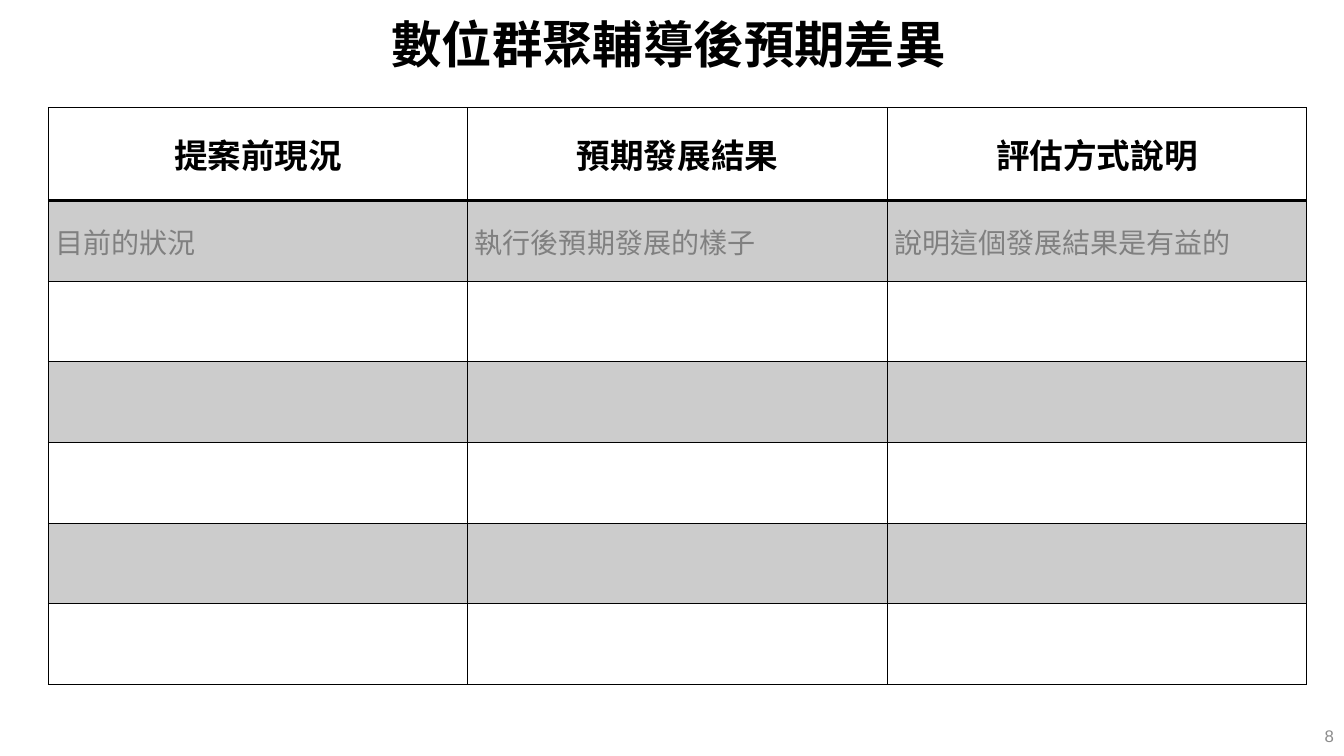
from lxml.etree import SubElement
from pptx import Presentation
from pptx.dml.color import RGBColor
from pptx.enum.lang import MSO_LANGUAGE_ID as Language
from pptx.enum.text import MSO_ANCHOR as Anchor, PP_ALIGN as Align
from pptx.oxml.ns import qn
from pptx.util import Inches, Pt

COLORS = {"ink": "000000", "hint": "808080", "number": "8C8C8C"}
LATIN, CJK = "Arial", "Noto Sans CJK SC"
WIDTH, HEIGHT = 13.33, 7.5
COLUMN_WIDTH, HEADER_HEIGHT, ROW_HEIGHT = 4.16, 0.92, 0.8
ROW_COUNT = 7
HEADERS = ["提案前現況", "預期發展結果", "評估方式說明"]
HINTS = ["目前的狀況", "執行後預期發展的樣子", "說明這個發展結果是有益的"]


def write(text_frame, text, size, color, align, font=CJK, bold=False):
    paragraph = text_frame.paragraphs[0]
    paragraph.alignment = align
    run = paragraph.add_run()
    run.text = text
    run.font.name = font
    run.font.size = Pt(size)
    run.font.bold = bold
    run.font.color.rgb = RGBColor.from_string(COLORS[color])
    run.font.language_id = Language.TRADITIONAL_CHINESE
    run.font._element.find(qn("a:latin")).addnext(
        run.font._element.makeelement(qn("a:ea"), {"typeface": CJK}))


def add_title(slide, text):
    title = slide.shapes.title
    title.left, title.top = Inches(1.47), Inches(0.08)
    title.width, title.height = Inches(10.32), Inches(0.71)
    title.text_frame.vertical_anchor = Anchor.MIDDLE
    write(title.text_frame, text, 36, "ink", Align.CENTER, bold=True)


def add_page_number(slide, text):
    width, height = 3, 0.4
    box = slide.shapes.add_textbox(Inches(WIDTH - width), Inches(HEIGHT - height),
                                   Inches(width), Inches(height))
    box.text_frame.word_wrap = True
    box.text_frame.vertical_anchor = Anchor.MIDDLE
    write(box.text_frame, text, 12, "number", Align.RIGHT, LATIN)


def set_borders(cell, top, bottom):
    properties = cell._tc.get_or_add_tcPr()
    for side, width in (("L", 1), ("R", 1), ("T", top), ("B", bottom)):
        line = SubElement(properties, qn(f"a:ln{side}"), w=str(Pt(width)))
        fill = SubElement(line, qn("a:solidFill"))
        SubElement(fill, qn("a:srgbClr"), val=COLORS["ink"])


def set_fill(cell, shaded):
    if not shaded:
        cell.fill.background()
        return
    cell.fill.solid()
    cell.fill.fore_color.rgb = RGBColor.from_string(COLORS["ink"])
    color = cell._tc.tcPr.find(qn("a:solidFill")).find(qn("a:srgbClr"))
    SubElement(color, qn("a:alpha"), val="20000")


def add_comparison_table(slide):
    table = slide.shapes.add_table(
        ROW_COUNT, len(HEADERS), Inches(0.48), Inches(1.07),
        Inches(COLUMN_WIDTH * len(HEADERS)),
        Inches(HEADER_HEIGHT + ROW_HEIGHT * (ROW_COUNT - 1))).table
    table.horz_banding = False
    for column in table.columns:
        column.width = Inches(COLUMN_WIDTH)
    for row_index, row in enumerate(table.rows):
        row.height = Inches(ROW_HEIGHT if row_index else HEADER_HEIGHT)
        for cell in row.cells:
            cell.vertical_anchor = Anchor.MIDDLE
            cell.margin_left = cell.margin_right = Inches(0.07)
            cell.margin_top = cell.margin_bottom = 0
            set_borders(cell, top=2 if row_index == 1 else 1,
                        bottom=1 if row_index else 2)
            set_fill(cell, shaded=row_index % 2 == 1)
    for column_index, (header, hint) in enumerate(zip(HEADERS, HINTS)):
        write(table.cell(0, column_index).text_frame, header, 24, "ink",
              Align.CENTER, LATIN, bold=True)
        write(table.cell(1, column_index).text_frame, hint, 20, "hint",
              Align.JUSTIFY, LATIN if column_index == 1 else CJK)


def main():
    presentation = Presentation()
    presentation.slide_width = Inches(WIDTH)
    presentation.slide_height = Inches(HEIGHT)
    slide = presentation.slides.add_slide(presentation.slide_layouts[5])
    add_title(slide, "數位群聚輔導後預期差異")
    add_comparison_table(slide)
    add_page_number(slide, "8")
    presentation.save("out.pptx")


if __name__ == "__main__":
    main()
